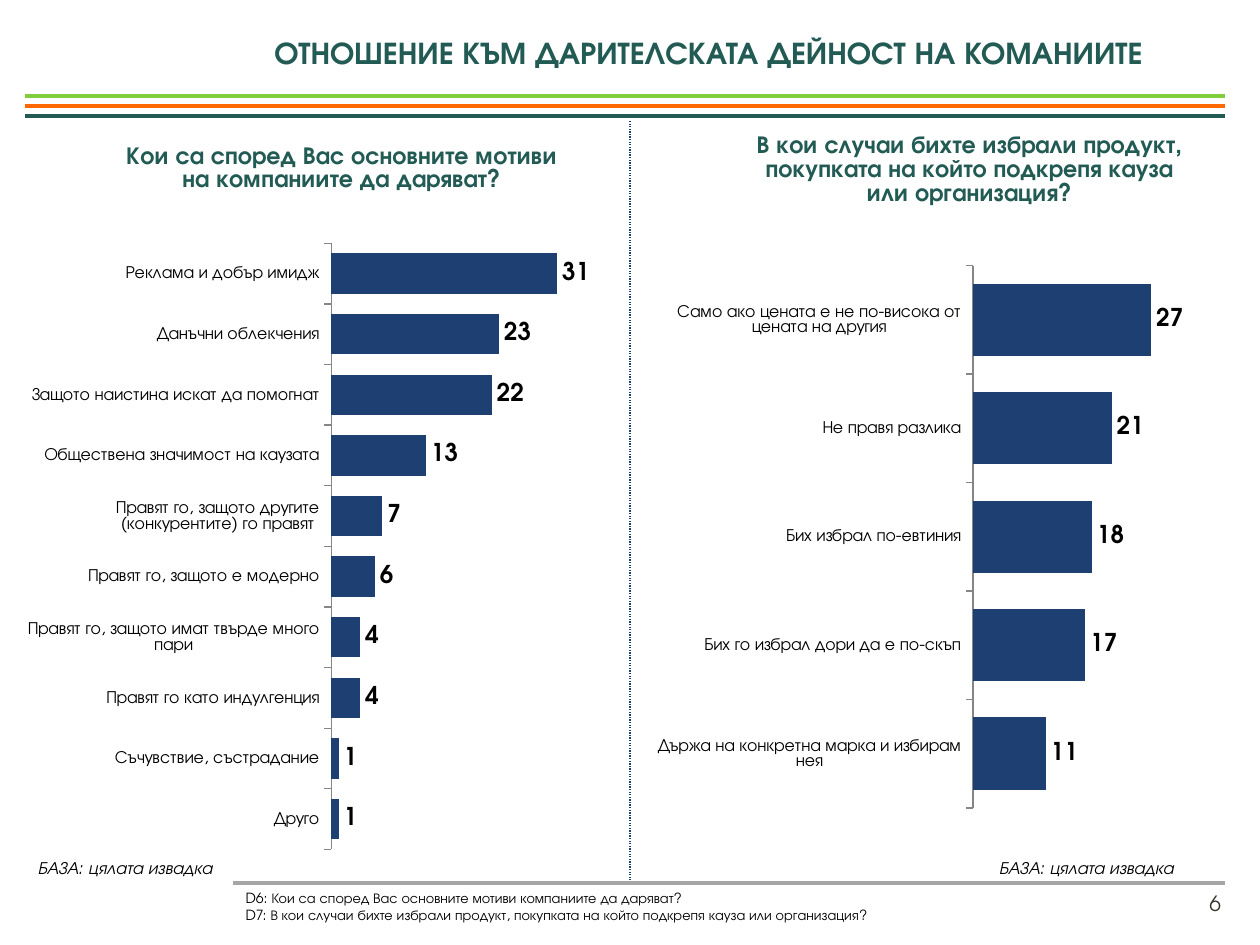
from dataclasses import dataclass

from lxml import etree
from pptx import Presentation
from pptx.chart.data import CategoryChartData
from pptx.dml.color import RGBColor
from pptx.enum.chart import XL_CHART_TYPE, XL_LABEL_POSITION, XL_TICK_LABEL_POSITION, XL_TICK_MARK
from pptx.enum.dml import MSO_LINE
from pptx.enum.shapes import MSO_CONNECTOR
from pptx.enum.text import PP_ALIGN
from pptx.oxml.ns import qn
from pptx.util import Inches, Pt

BAR = XL_CHART_TYPE.BAR_CLUSTERED
OUTSIDE_END = XL_LABEL_POSITION.OUTSIDE_END
LOW = XL_TICK_LABEL_POSITION.LOW
TICK_OUT, TICK_NONE = XL_TICK_MARK.OUTSIDE, XL_TICK_MARK.NONE
STRAIGHT = MSO_CONNECTOR.STRAIGHT
DOTTED = MSO_LINE.ROUND_DOT
LEFT, RIGHT = PP_ALIGN.LEFT, PP_ALIGN.RIGHT


@dataclass(frozen=True)
class Theme:
    font: str = "TeX Gyre Adventor"
    black: str = "000000"
    green: str = "225A54"
    lime: str = "80CD3D"
    orange: str = "FF6700"
    navy: str = "1D3F71"
    grey: str = "A6A6A6"
    axis: str = "868686"
    page: str = "39342D"
    heading: int = 18
    question: int = 14
    value: int = 14
    page_number: int = 12
    body: int = 10
    footnote: int = 8


THEME = Theme()

MOTIVES = {
    "Реклама и добър имидж": 31,
    "Данъчни облекчения": 23,
    "Защото наистина искат да помогнат": 22,
    "Обществена значимост на каузата": 13,
    "Правят го, защото другите (конкурентите) го правят": 7,
    "Правят го, защото е модерно": 6,
    "Правят го, защото имат твърде много пари": 4,
    "Правят го като индулгенция": 4,
    "Съчувствие, състрадание": 1,
    "Друго": 1,
}
CHOICES = {
    "Само ако цената е не по-висока от цената на другия": 27,
    "Не правя разлика": 21,
    "Бих избрал по-евтиния": 18,
    "Бих го избрал дори да е по-скъп": 17,
    "Държа на конкретна марка и избирам нея": 11,
}
BASE = "БАЗА: цялата извадка"
FOOTNOTES = (
    "D6: Кои са според Вас основните мотиви компаниите да даряват?\n"
    "D7: В кои случаи бихте избрали продукт, покупката на който подкрепя кауза или организация?"
)


def style_font(font, size, color=THEME.black, bold=False, italic=False):
    font.name = THEME.font
    font.size = Pt(size)
    font.bold = bold
    font.italic = italic
    font.color.rgb = RGBColor.from_string(color)


def add_text(slide, text, box, size, align=LEFT, wrap=True, **font_format):
    frame = slide.shapes.add_textbox(*map(Inches, box)).text_frame
    frame.word_wrap = wrap
    frame.text = text
    for paragraph in frame.paragraphs:
        paragraph.alignment = align
        style_font(paragraph.font, size, **font_format)


def add_rule(slide, start, end, color, width=2, dash=None):
    rule = slide.shapes.add_connector(STRAIGHT, *map(Inches, start + end))
    rule.line.color.rgb = RGBColor.from_string(color)
    rule.line.width = Pt(width)
    if dash:
        rule.line.dash_style = dash
    etree.SubElement(rule._element.spPr, qn("a:effectLst"))


def make_layout(parent, **settings):
    for old in parent.findall(qn("c:layout")):
        parent.remove(old)
    layout = etree.Element(qn("c:layout"))
    manual = etree.SubElement(layout, qn("c:manualLayout"))
    for name, value in settings.items():
        etree.SubElement(manual, qn(f"c:{name}")).set("val", str(value))
    return layout


def place_title(chart, x, y):
    title = chart.chart_title._element
    overlay = title.find(qn("c:overlay"))
    overlay.set("val", "1")
    overlay.addprevious(make_layout(title, xMode="edge", yMode="edge", x=x, y=y))


def place_plot(chart, x, y, w, h):
    plot_area = chart._chartSpace.chart.plotArea
    layout = make_layout(plot_area, layoutTarget="inner", xMode="edge", yMode="edge",
                         x=x, y=y, w=w, h=h)
    plot_area.insert(0, layout)


def add_answers(slide, question, answers, box, plot_box, title_at, maximum):
    data = CategoryChartData(number_format="0")
    data.categories = list(answers)
    data.add_series("Series 1", list(answers.values()))
    chart = slide.shapes.add_chart(BAR, *map(Inches, box), data).chart
    chart.has_legend = False
    style_font(chart.font, THEME.heading)

    title = chart.chart_title.text_frame
    title.text = question
    style_font(title.paragraphs[0].runs[0].font, THEME.question, color=THEME.green, bold=True)
    place_title(chart, *title_at)
    place_plot(chart, *plot_box)

    categories = chart.category_axis
    categories.reverse_order = True
    categories.has_major_gridlines = False
    categories.major_tick_mark = TICK_OUT
    categories.minor_tick_mark = TICK_NONE
    categories.tick_label_position = LOW
    categories.format.line.color.rgb = RGBColor.from_string(THEME.axis)
    style_font(categories.tick_labels.font, THEME.body)

    values = chart.value_axis
    values.visible = False
    values.has_major_gridlines = False
    values.minimum_scale = 0
    values.maximum_scale = maximum

    plot = chart.plots[0]
    plot.gap_width = 50
    plot.vary_by_categories = False
    bars = plot.series[0].format
    bars.fill.solid()
    bars.fill.fore_color.rgb = RGBColor.from_string(THEME.navy)
    plot.has_data_labels = True
    labels = plot.data_labels
    labels.show_value = True
    labels.position = OUTSIDE_END
    labels.number_format = "0"
    labels.number_format_is_linked = False
    style_font(labels.font, THEME.value, bold=True)


def main():
    deck = Presentation()
    deck.slide_width, deck.slide_height = Inches(10), Inches(7.5)
    slide = deck.slides.add_slide(deck.slide_layouts[6])

    for row, color in enumerate((THEME.lime, THEME.orange, THEME.green)):
        y = 0.76 + 0.08 * row
        add_rule(slide, (0.2, y), (9.72, y), color)
    add_rule(slide, (1.85, 7.01), (9.72, 7.01), THEME.grey)
    add_rule(slide, (5, 0.96), (5, 6.98), THEME.navy, width=0.75, dash=DOTTED)

    add_text(slide, "ОТНОШЕНИЕ КЪМ ДАРИТЕЛСКАТА ДЕЙНОСТ НА КОМАНИИТЕ",
             (2.08, 0.21, 7.68, 0.4), THEME.heading, wrap=False, color=THEME.green, bold=True)
    add_answers(slide, "Кои са според Вас основните мотиви на компаниите да даряват?", MOTIVES,
                box=(0.22, 1.04, 4.57, 5.94), plot_box=(0.52, 0.15, 0.45, 0.81),
                title_at=(0.15, 0.01), maximum=35)
    add_answers(slide, "В кои случаи бихте избрали продукт, покупката на който подкрепя кауза "
                "или организация?", CHOICES,
                box=(5.22, 0.96, 4.57, 5.74), plot_box=(0.54, 0.2, 0.35, 0.75),
                title_at=(0.15, 0.01), maximum=30)

    for x, width in ((0.2, 3.07), (7.83, 1.93)):
        add_text(slide, BASE, (x, 6.75, width, 0.27), THEME.body, italic=True)
    add_text(slide, FOOTNOTES, (1.85, 7.01, 7.48, 0.37), THEME.footnote)
    add_text(slide, "6", (7.46, 7.02, 2.33, 0.4), THEME.page_number, align=RIGHT, color=THEME.page)

    deck.save("out.pptx")


if __name__ == "__main__":
    main()
